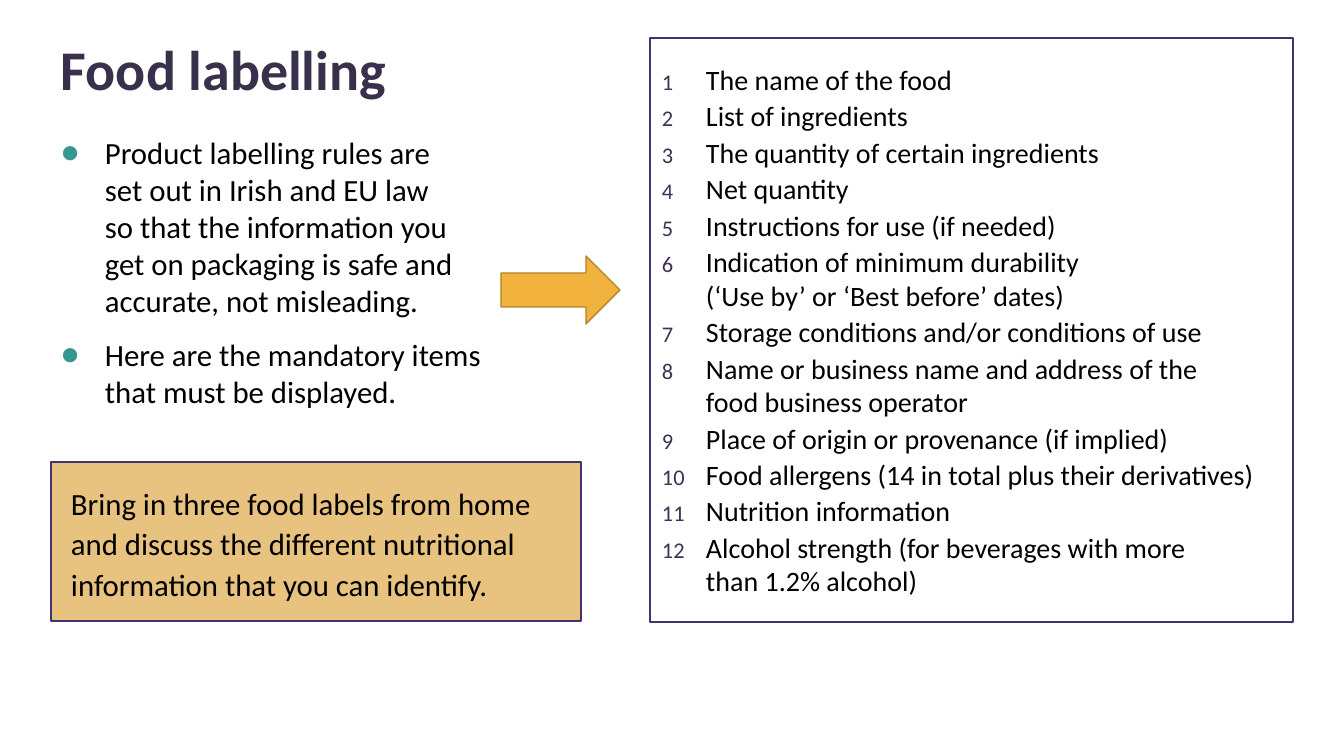
from lxml import etree
from pptx import Presentation
from pptx.dml.color import RGBColor
from pptx.enum.shapes import MSO_SHAPE as Preset
from pptx.enum.text import MSO_ANCHOR as Anchor, PP_ALIGN as Align
from pptx.oxml.ns import qn
from pptx.util import Emu, Pt

PX = 914400 / 100.8
FONT = "Calibri"
INDENT = 44

BLACK = RGBColor(0x00, 0x00, 0x00)
WHITE = RGBColor(0xFF, 0xFF, 0xFF)
TITLE_INK = RGBColor(0x39, 0x30, 0x4C)
BORDER = RGBColor(0x45, 0x32, 0x6C)
NUMBER_INK = RGBColor(0x3F, 0x31, 0x53)
TEAL = RGBColor(0x36, 0x97, 0x91)
SAND = RGBColor(0xE7, 0xC3, 0x7F)
AMBER = RGBColor(0xF2, 0xB3, 0x3E)
DARK_AMBER = RGBColor(0xB3, 0x84, 0x2E)

RULES = [
    "Product labelling rules are \nset out in Irish and EU law \nso that the information you "
    "get on packaging is safe and accurate, not misleading.",
    "Here are the mandatory items that must be displayed.",
]
TASK = ("Bring in three food labels from home \nand discuss the different nutritional "
        "information that you can identify.")
MANDATORY_ITEMS = [
    "The name of the food",
    "List of ingredients",
    "The quantity of certain ingredients",
    "Net quantity",
    "Instructions for use (if needed)",
    "Indication of minimum durability \n(‘Use by’ or ‘Best before’ dates)",
    "Storage conditions and/or conditions of use",
    "Name or business name and address of the \nfood business operator",
    "Place of origin or provenance (if implied)",
    "Food allergens (14 in total plus their derivatives)",
    "Nutrition information",
    "Alcohol strength (for beverages with more \nthan 1.2% alcohol)",
]


def px(length):
    return Emu(round(length * PX))


def add_text_box(slide, left, top, width, height):
    box = slide.shapes.add_textbox(px(left), px(top), px(width), px(height))
    box.text_frame.word_wrap = True
    return box.text_frame


def add_panel(slide, preset, left, top, width, height, fill, line, inset=10):
    shape = slide.shapes.add_shape(preset, px(left), px(top), px(width), px(height))
    shape.shadow.inherit = False
    shape.fill.solid()
    shape.fill.fore_color.rgb = fill
    shape.line.color.rgb = line
    shape.line.width = Pt(1)
    frame = shape.text_frame
    frame.word_wrap = True
    frame.vertical_anchor = Anchor.MIDDLE
    frame.margin_left = frame.margin_right = px(inset)
    frame.margin_top = frame.margin_bottom = px(inset)
    return frame


def set_bullet(paragraph, color, percent, tag, **attributes):
    """Give the paragraph a hanging indent and a coloured bullet or number."""
    properties = paragraph._p.get_or_add_pPr()
    properties.set("marL", str(px(INDENT)))
    properties.set("indent", str(-px(INDENT)))
    bullet_color = etree.SubElement(properties, qn("a:buClr"))
    etree.SubElement(bullet_color, qn("a:srgbClr"), val=str(color))
    etree.SubElement(properties, qn("a:buSzPct"), val=str(percent * 1000))
    etree.SubElement(properties, qn("a:buFont"), typeface=FONT)
    etree.SubElement(properties, qn(tag), **attributes)


def write(frame, texts, size, color=BLACK, bold=False, spacing=1.0, after=0, bullet=None):
    """Fill the frame with one paragraph per text; bullet holds set_bullet arguments."""
    for index, text in enumerate(texts):
        paragraph = frame.add_paragraph() if index else frame.paragraphs[0]
        paragraph.text = text
        paragraph.alignment = Align.LEFT
        paragraph.line_spacing = spacing
        paragraph.space_after = Pt(after)
        if bullet:
            set_bullet(paragraph, **bullet)
        for run in paragraph.runs:
            run.font.name = FONT
            run.font.size = Pt(size)
            run.font.bold = bold
            run.font.color.rgb = color


def main():
    presentation = Presentation()
    presentation.slide_width = px(1344)
    presentation.slide_height = px(756)
    slide = presentation.slides.add_slide(presentation.slide_layouts[6])

    rules = add_text_box(slide, 51, 129, 445, 302)
    write(rules, RULES, 22, after=12,
          bullet=dict(color=TEAL, percent=100, tag="a:buChar", char="●"))

    title = add_text_box(slide, 51, 37, 1137, 69)
    write(title, ["Food labelling"], 40, TITLE_INK, bold=True, spacing=0.9)

    add_panel(slide, Preset.RIGHT_ARROW, 501, 256, 119, 68, AMBER, DARK_AMBER)

    task = add_panel(slide, Preset.RECTANGLE, 51, 462, 530, 159, SAND, BORDER, inset=20)
    write(task, [TASK], 22, spacing=1.1)

    items = add_panel(slide, Preset.RECTANGLE, 650, 38, 643, 584, WHITE, BORDER, inset=12)
    write(items, MANDATORY_ITEMS, 20, after=2,
          bullet=dict(color=NUMBER_INK, percent=80, tag="a:buAutoNum", type="arabicPlain"))

    presentation.save("out.pptx")


if __name__ == "__main__":
    main()
